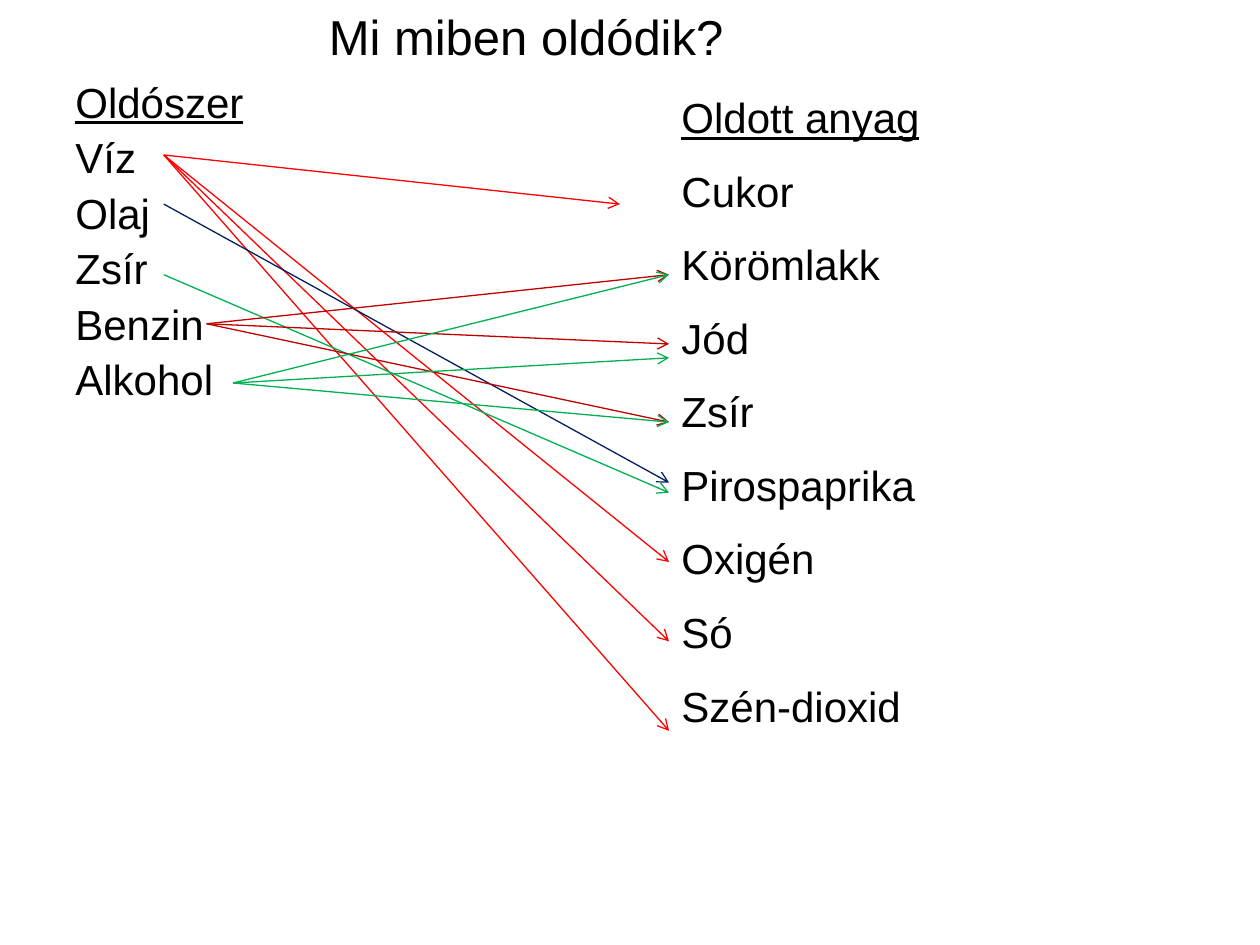
from lxml import etree
from pptx import Presentation
from pptx.dml.color import RGBColor
from pptx.enum.shapes import MSO_CONNECTOR
from pptx.enum.text import MSO_AUTO_SIZE, PP_ALIGN
from pptx.oxml.ns import qn
from pptx.util import Inches, Pt

STRAIGHT = MSO_CONNECTOR.STRAIGHT
GROW = MSO_AUTO_SIZE.SHAPE_TO_FIT_TEXT
NO_FIT = MSO_AUTO_SIZE.NONE
LEFT, CENTER = PP_ALIGN.LEFT, PP_ALIGN.CENTER

COLORS = {"text": "000000", "red": "FF0000", "navy": "002060",
          "green": "00B050", "dark_red": "C00000"}
FONT = "Arial"

TITLE = "Mi miben oldódik?"
SOLVENTS = ["Oldószer", "Víz", "Olaj", "Zsír", "Benzin", "Alkohol"]
SOLUTES = ["Oldott anyag", "Cukor", "Körömlakk", "Jód", "Zsír",
           "Pirospaprika", "Oxigén", "Só", "Szén-dioxid"]

SOLUTE_X = 5.31
ARROWS = [
    ("red", (1.3, 1.23), [(4.92, 1.62), (SOLUTE_X, 5.09), (SOLUTE_X, 4.46), (SOLUTE_X, 5.8)]),
    ("navy", (1.3, 1.62), [(SOLUTE_X, 3.83)]),
    ("green", (1.3, 2.18), [(SOLUTE_X, 3.91)]),
    ("dark_red", (1.64, 2.57), [(SOLUTE_X, 2.18), (SOLUTE_X, 2.73), (SOLUTE_X, 3.35)]),
    ("green", (1.85, 3.04), [(SOLUTE_X, 2.18), (SOLUTE_X, 2.84), (SOLUTE_X, 3.35)]),
]


def color(name):
    return RGBColor.from_string(COLORS[name])


def add_text(s, box, lines, size, space_before=0, line_spacing=1.0,
             align=LEFT, fit=GROW, underline_first=False):
    tf = s.shapes.add_textbox(*map(Inches, box)).text_frame
    tf.word_wrap = True
    tf.auto_size = fit
    for i, line in enumerate(lines):
        p = tf.paragraphs[0] if i == 0 else tf.add_paragraph()
        r = p.add_run()
        r.text = line
        r.font.underline = underline_first and i == 0
        p.alignment = align
        p.line_spacing = line_spacing
        p.space_before = Pt(space_before)
        p.font.name = FONT
        p.font.size = Pt(size)
        p.font.color.rgb = color("text")


def add_arrow(s, start, end, color_name):
    line = s.shapes.add_connector(STRAIGHT, *map(Inches, start + end))
    line.line.color.rgb = color(color_name)
    line.line.width = Pt(0.75)
    etree.SubElement(line.line._get_or_add_ln(), qn("a:tailEnd"), type="arrow")
    etree.SubElement(line._element.spPr, qn("a:effectLst"))


def main():
    prs = Presentation()
    prs.slide_width, prs.slide_height = Inches(10), Inches(7.5)
    s = prs.slides.add_slide(prs.slide_layouts[6])

    add_text(s, (0.5, 0.6, 3.71, 6.1), SOLVENTS, 24, space_before=5.8,
             line_spacing=0.9, fit=NO_FIT, underline_first=True)
    add_text(s, (SOLUTE_X, 0.68, 4.25, 5.35), SOLUTES, 24, space_before=13.2,
             underline_first=True)
    add_text(s, (0.75, 0, 6.85, 0.57), [TITLE], 28, align=CENTER)

    for color_name, start, ends in ARROWS:
        for end in ends:
            add_arrow(s, start, end, color_name)

    prs.save("out.pptx")


if __name__ == "__main__":
    main()
